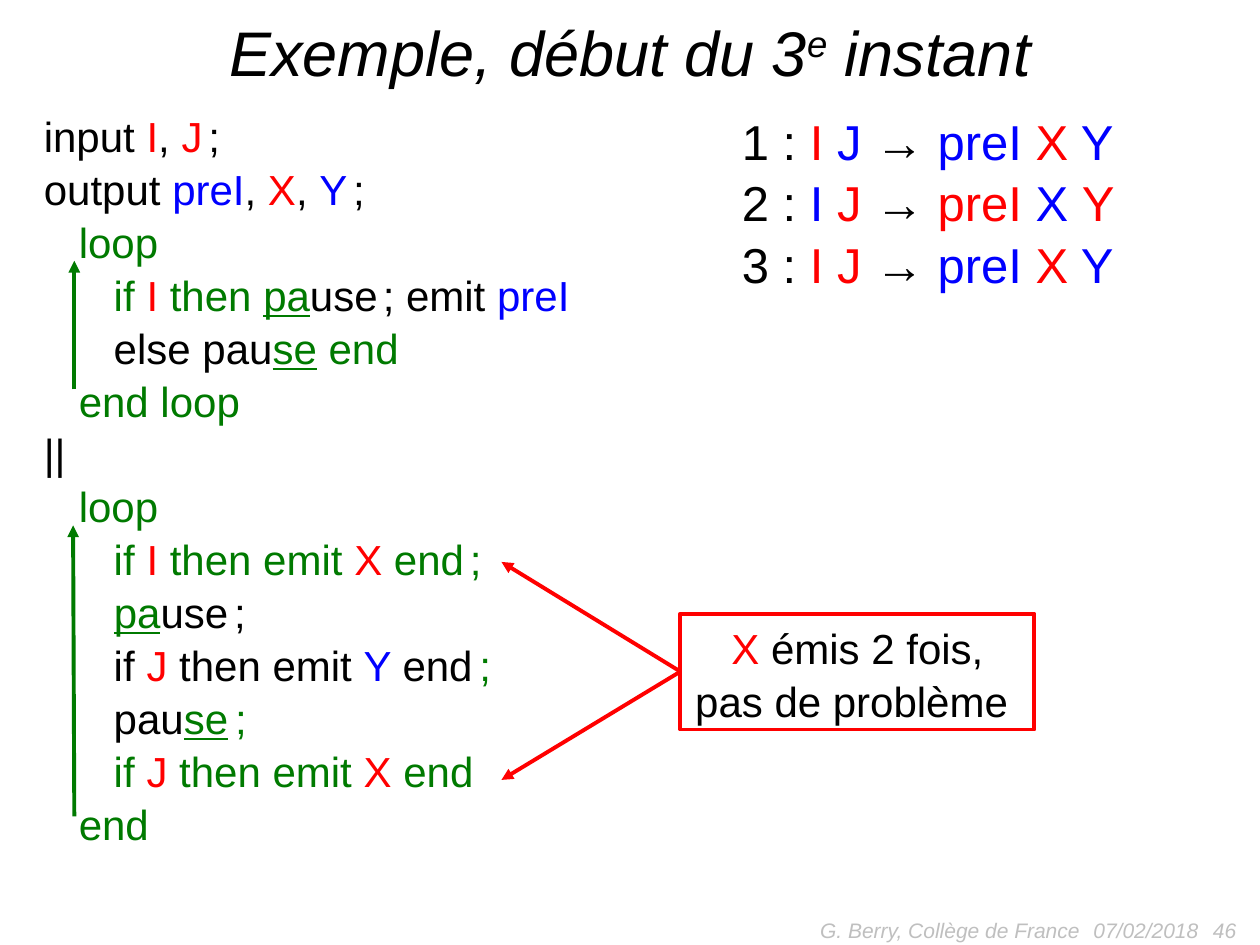
from lxml.etree import SubElement
from pptx import Presentation
from pptx.dml.color import RGBColor
from pptx.enum.shapes import MSO_CONNECTOR, MSO_SHAPE
from pptx.enum.text import MSO_ANCHOR, PP_ALIGN
from pptx.oxml.ns import qn
from pptx.util import Inches, Pt

BLACK, RED, BLUE, GREEN, GREY = "000000", "FF0000", "0000FF", "007A00", "BFBFBF"
K, R, B, G = ({"color": c} for c in (BLACK, RED, BLUE, GREEN))
CURSOR = {"color": GREEN, "underline": True}
TINY = {"color": BLACK, "size": Pt(10.5)}
THIN = {"color": BLACK, "size": Pt(12)}
WIDE = {"color": GREEN, "size": Pt(14)}
SUPER = {"color": BLACK, "baseline": "30000"}

PROGRAM = [
    [("input ", K), ("I", R), (", ", K), ("J", R), (" ", THIN), (";", K)],
    [("output ", K), ("preI", B), (", ", K), ("X", R), (", ", K), ("Y", B), (" ", THIN), (";", K)],
    [("   loop", G)],
    [("      if ", G), ("I ", R), ("then ", G), ("pa", CURSOR), ("use", K), (" ", TINY),
     ("; emit ", K), ("preI", B)],
    [("      else pau", K), ("se", CURSOR), (" end", G)],
    [("   end loop", G)],
    [("||", K)],
    [("   loop", G)],
    [("      if ", G), ("I ", R), ("then emit ", G), ("X ", R), ("end", G), (" ", THIN), (";", G)],
    [("      ", K), ("pa", CURSOR), ("use", K), (" ", THIN), (";", K)],
    [("      if ", K), ("J", R), (" then emit ", K), ("Y ", B), ("end", K), (" ", WIDE), (";", G)],
    [("      pau", K), ("se", CURSOR), (" ", WIDE), (";", G)],
    [("      if ", G), ("J ", R), ("then emit ", G), ("X ", R), ("end", G)],
    [("   end", G)],
]
TRACE = [
    [("1 :", K), (" I ", R), ("J ", B), ("→ ", K), ("preI ", B), ("X", R), (" Y", B)],
    [("2 :", K), (" I ", B), ("J ", R), ("→ ", K), ("preI ", R), ("X ", B), ("Y", R)],
    [("3 : ", K), ("I J ", R), ("→ ", K), ("preI ", B), ("X", R), (" Y", B)],
]
REMARK = [[("X ", R), ("émis 2 fois,", K)], [("pas de problème ", K)]]
TITLE = [[("Exemple, début du 3", K), ("e", SUPER), (" instant", K)]]


def rgb(value):
    """Turn a hex string into a colour."""
    return RGBColor.from_string(value)


def write_lines(frame, lines, size, align=PP_ALIGN.LEFT, spacing=1.05, italic=False):
    """Fill a text frame with lines of styled runs."""
    frame.word_wrap = True
    for number, line in enumerate(lines):
        paragraph = frame.paragraphs[0] if number == 0 else frame.add_paragraph()
        paragraph.alignment, paragraph.line_spacing = align, spacing
        for text, style in line:
            run = paragraph.add_run()
            run.text = text
            formats = {"name": "Arial", "size": Pt(size), "italic": italic, **style}
            run.font.color.rgb = rgb(formats.pop("color"))
            if "baseline" in formats:
                run.font._element.set("baseline", formats.pop("baseline"))
            for key, value in formats.items():
                setattr(run.font, key, value)


def add_text(slide, box, lines, size, anchor=MSO_ANCHOR.TOP, **layout):
    """Place styled lines in a text box."""
    frame = slide.shapes.add_textbox(*map(Inches, box)).text_frame
    frame.vertical_anchor = anchor
    write_lines(frame, lines, size, **layout)


def add_arrow(slide, start, end, color):
    """Draw a straight arrow that points at its end."""
    arrow = slide.shapes.add_connector(MSO_CONNECTOR.STRAIGHT, *map(Inches, (*start, *end)))
    arrow.line.color.rgb = rgb(color)
    arrow.line.width = Pt(2.25)
    SubElement(arrow.line._get_or_add_ln(), qn("a:tailEnd"), type="triangle")
    SubElement(arrow._element.spPr, qn("a:effectLst"))
    return arrow


def add_title(slide, box):
    """Write the slide title."""
    add_text(slide, box, TITLE, 36, MSO_ANCHOR.MIDDLE,
             align=PP_ALIGN.CENTER, spacing=1.0, italic=True)


def add_program(slide, box):
    """Write the program with an arrow back to the head of each loop."""
    left, top, _, _ = box
    add_text(slide, box, PROGRAM, 24)
    for tail_x, tail, head_x, head in ((0.34, 2.28, 0.34, 1.26), (0.34, 5.67, 0.33, 3.36)):
        add_arrow(slide, (left + tail_x, top + tail), (left + head_x, top + head), GREEN)


def add_remark(slide, box, targets):
    """Frame the remark and point it at the two emissions."""
    left, top, _, height = box
    remark = slide.shapes.add_shape(MSO_SHAPE.RECTANGLE, *map(Inches, box))
    remark.shadow.inherit = False
    remark.fill.background()
    remark.line.color.rgb = rgb(RED)
    remark.line.width = Pt(2.25)
    remark.text_frame.vertical_anchor = MSO_ANCHOR.TOP
    write_lines(remark.text_frame, REMARK, 24, PP_ALIGN.CENTER)
    for target in targets:
        arrow = add_arrow(slide, (left, top + height / 2), target, RED)
        arrow.begin_connect(remark, 1)


def add_footer(slide, box):
    """Write the author, date and page number along the bottom."""
    left, top, _, height = box
    parts = (
        ("G. Berry, Collège de France", 0, 3.17, PP_ALIGN.RIGHT),
        ("07/02/2018", 3.08, 1.2, PP_ALIGN.LEFT),
        ("46", 3.91, 0.5, PP_ALIGN.RIGHT),
    )
    for text, offset, width, align in parts:
        add_text(slide, (left + offset, top, width, height), [[(text, {"color": GREY})]], 12,
                 MSO_ANCHOR.MIDDLE, align=align, spacing=1.0, italic=True)


def main():
    """Build and save the slide."""
    deck = Presentation()
    deck.slide_width, deck.slide_height = Inches(10), Inches(7.5)
    slide = deck.slides.add_slide(deck.slide_layouts[6])
    add_footer(slide, (5.5, 7.18, 4.41, 0.4))
    add_title(slide, (0.25, 0.05, 9.5, 0.71))
    add_program(slide, (0.25, 0.81, 4.6, 6.04))
    add_text(slide, (5.79, 0.81, 3.19, 2.57), TRACE, 28)
    add_remark(slide, (5.4, 4.87, 2.81, 0.92), ((3.98, 4.46), (3.98, 6.19)))
    deck.save("out.pptx")


if __name__ == "__main__":
    main()
